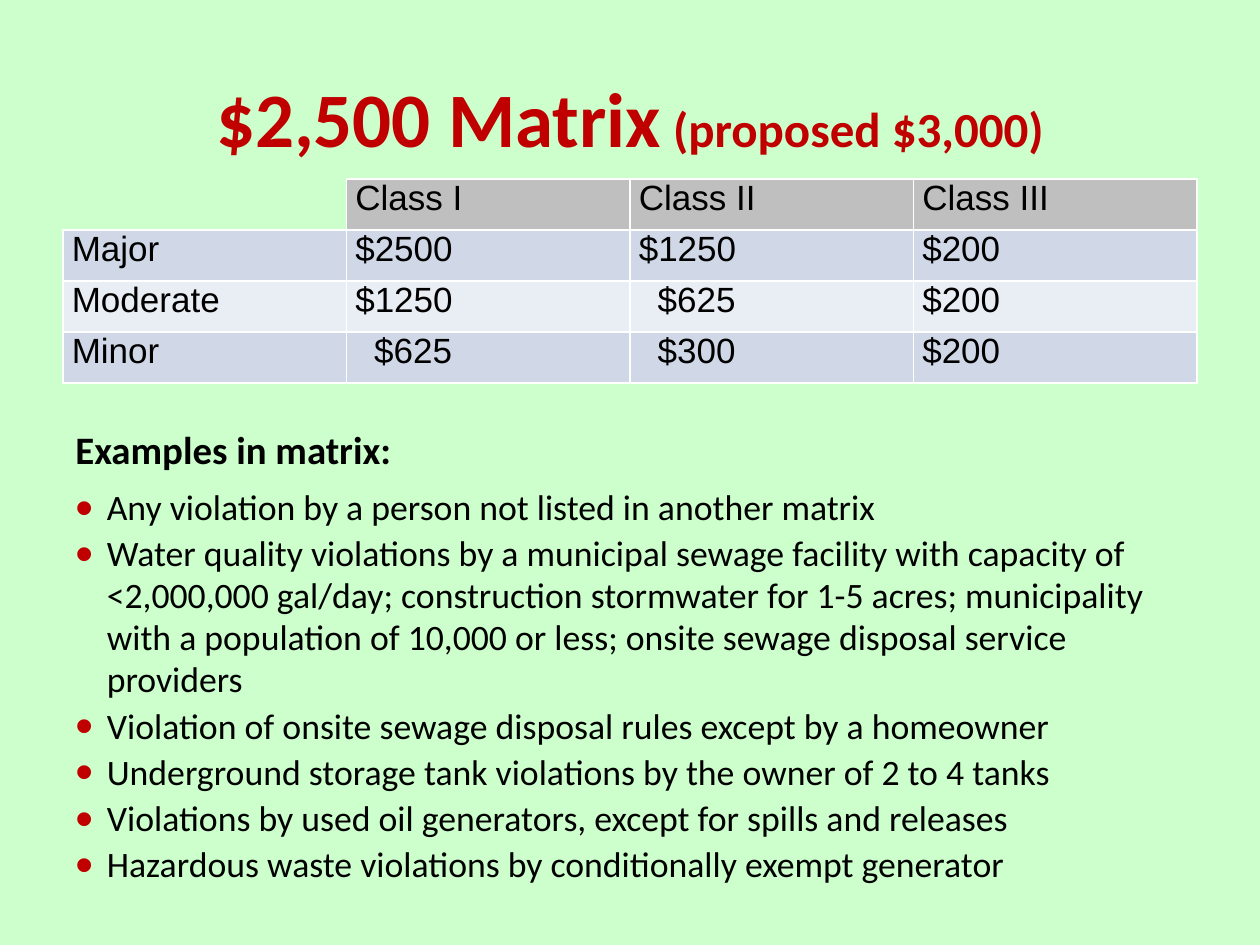
from lxml import etree
from pptx import Presentation
from pptx.dml.color import RGBColor
from pptx.enum.text import MSO_ANCHOR, PP_ALIGN
from pptx.oxml.ns import qn
from pptx.util import Inches, Pt

MIDDLE = MSO_ANCHOR.MIDDLE
CENTER = PP_ALIGN.CENTER

MINT, RED, BLACK, WHITE = "CCFFCC", "C00000", "000000", "FFFFFF"
HEADER_GRAY, BAND_DARK, BAND_LIGHT = "BFBFBF", "D0D8E8", "E9EDF4"

PENALTIES = [
    ["", "Class I", "Class II", "Class III"],
    ["Major", "$2500", "$1250", "$200"],
    ["Moderate", "$1250", "$625", "$200"],
    ["Minor", "$625", "$300", "$200"],
]
# Three-digit amounts in these columns line up with the four-digit ones
ALIGNED_COLUMNS = (1, 2)

EXAMPLES = [
    "Any violation by a person not listed in another matrix",
    "Water quality violations by a municipal sewage facility with capacity of "
    "<2,000,000 gal/day; construction stormwater for 1-5 acres; municipality "
    "with a population of 10,000 or less; onsite sewage disposal service providers",
    "Violation of onsite sewage disposal rules except by a homeowner",
    "Underground storage tank violations by the owner of 2 to 4 tanks",
    "Violations by used oil generators, except for spills and releases",
    "Hazardous waste violations by conditionally exempt generator",
]


def rgb(value):
    return RGBColor.from_string(value)


def style_run(run, font_name, size, color, bold=False):
    run.font.name = font_name
    run.font.size = Pt(size)
    run.font.color.rgb = rgb(color)
    run.font.bold = bold


def set_borders(cell, color, width):
    """Draw all four edges of a cell; no color means no line."""
    properties = cell._tc.get_or_add_tcPr()
    for index, side in enumerate(("a:lnL", "a:lnR", "a:lnT", "a:lnB")):
        line = etree.Element(qn(side), w=str(Pt(width)))
        if color:
            fill = etree.SubElement(line, qn("a:solidFill"))
            etree.SubElement(fill, qn("a:srgbClr"), val=color)
        else:
            etree.SubElement(line, qn("a:noFill"))
        properties.insert(index, line)


def set_indent(paragraph, indent):
    properties = paragraph._p.get_or_add_pPr()
    properties.set("marL", str(indent))
    properties.set("indent", str(-indent))
    return properties


def add_bullet(properties):
    color = etree.SubElement(properties, qn("a:buClr"))
    etree.SubElement(color, qn("a:srgbClr"), val=RED)
    etree.SubElement(properties, qn("a:buSzPct"), val="142000")
    etree.SubElement(properties, qn("a:buFont"), typeface="Arial")
    etree.SubElement(properties, qn("a:buChar"), char="•")


def add_title(slide, left, top, width, height):
    frame = slide.shapes.add_textbox(left, top, width, height).text_frame
    frame.word_wrap = True
    frame.vertical_anchor = MIDDLE
    paragraph = frame.paragraphs[0]
    paragraph.alignment = CENTER
    for text, size in (("$2,500 Matrix", 44), (" (proposed $3,000)", 28)):
        run = paragraph.add_run()
        run.text = text
        style_run(run, "Calibri", size, RED, bold=True)


def add_penalty_table(slide, left, top, width, height):
    table = slide.shapes.add_table(
        len(PENALTIES), len(PENALTIES[0]), left, top, width, height).table
    for row, values in enumerate(PENALTIES):
        for column, value in enumerate(values):
            cell = table.cell(row, column)
            corner = row == 0 and column == 0
            if corner:
                fill = MINT
            elif row == 0:
                fill = HEADER_GRAY
            else:
                fill = BAND_DARK if row % 2 else BAND_LIGHT
            cell.fill.solid()
            cell.fill.fore_color.rgb = rgb(fill)
            set_borders(cell, None if corner else WHITE, 1)
            cell.margin_top = cell.margin_bottom = 0
            cell.margin_left = cell.margin_right = Inches(0.07)
            if row and column in ALIGNED_COLUMNS and len(value) == 4:
                cell.margin_left = Inches(0.22)
            cell.text_frame.text = value
            for run in cell.text_frame.paragraphs[0].runs:
                style_run(run, "Arial", 20, BLACK)


def add_examples(slide, left, top, width, height):
    frame = slide.shapes.add_textbox(left, top, width, height).text_frame
    frame.word_wrap = True

    # Heading
    heading = frame.paragraphs[0]
    heading.text = "Examples in matrix:"
    heading.space_after = Pt(6)
    set_indent(heading, Inches(0.25))
    style_run(heading.runs[0], "Calibri", 22.2, BLACK, bold=True)

    # Bulleted examples
    for example in EXAMPLES:
        paragraph = frame.add_paragraph()
        paragraph.text = example
        paragraph.line_spacing = 0.98
        paragraph.space_before = Pt(2.4)
        add_bullet(set_indent(paragraph, Inches(0.25)))
        style_run(paragraph.runs[0], "Calibri", 20.4, BLACK)


def main():
    presentation = Presentation()
    presentation.slide_width = Inches(10)
    presentation.slide_height = Inches(7.5)
    slide = presentation.slides.add_slide(presentation.slide_layouts[6])
    slide.background.fill.solid()
    slide.background.fill.fore_color.rgb = rgb(MINT)

    left, width = Inches(0.5), Inches(9)
    add_title(slide, left, Inches(0.3), width, Inches(1.25))
    add_penalty_table(slide, left, Inches(1.42), width, Inches(1.62))
    add_examples(slide, left, Inches(3.33), width, Inches(3.46))
    presentation.save("out.pptx")


if __name__ == "__main__":
    main()
